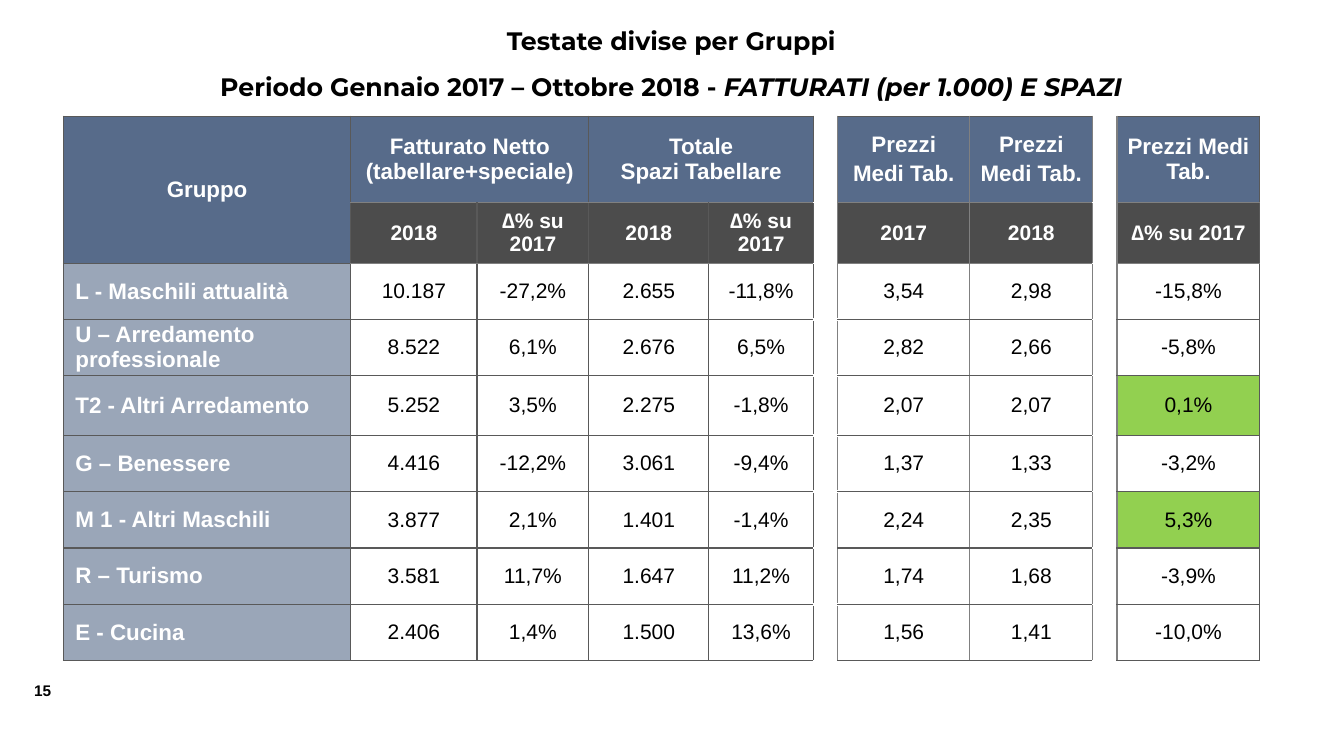
from pptx import Presentation
from pptx.dml.color import RGBColor
from pptx.enum.text import MSO_ANCHOR, MSO_AUTO_SIZE, PP_ALIGN
from pptx.oxml.ns import qn
from pptx.util import Cm, Pt
from lxml import etree

MIDDLE = MSO_ANCHOR.MIDDLE
NO_FIT = MSO_AUTO_SIZE.NONE
LEFT, CENTER = PP_ALIGN.LEFT, PP_ALIGN.CENTER

COLORS = {
    "blue": "576B8A", "black": "000000", "white": "FFFFFF",
    "green": "92D050", "dark": "595959", "gray": "808080",
}
COLUMNS = [7.24, 3.18, 2.82, 3.02, 2.64, 0.61, 3.33, 3.1, 0.61, 3.6]
ROWS = [2.18, 1.52, 1.42, 1.42, 1.5, 1.42, 1.42, 1.42, 1.42]
GAPS = (5, 8)
VALUES = [
    ["Gruppo", "Fatturato Netto (tabellare+speciale)", "", "Totale\nSpazi Tabellare", "", "",
     "Prezzi\nMedi Tab.", "Prezzi\nMedi Tab.", "", "Prezzi Medi Tab."],
    ["", "2018", "∆% su 2017", "2018", "∆% su 2017", "", "2017", "2018", "", "∆% su 2017"],
    ["L - Maschili attualità", "10.187", "-27,2%", "2.655", "-11,8%", "", "3,54", "2,98", "", "-15,8%"],
    ["U – Arredamento professionale", "8.522", "6,1%", "2.676", "6,5%", "", "2,82", "2,66", "", "-5,8%"],
    ["T2 - Altri Arredamento", "5.252", "3,5%", "2.275", "-1,8%", "", "2,07", "2,07", "", "0,1%"],
    ["G – Benessere", "4.416", "-12,2%", "3.061", "-9,4%", "", "1,37", "1,33", "", "-3,2%"],
    ["M 1 - Altri Maschili", "3.877", "2,1%", "1.401", "-1,4%", "", "2,24", "2,35", "", "5,3%"],
    ["R – Turismo", "3.581", "11,7%", "1.647", "11,2%", "", "1,74", "1,68", "", "-3,9%"],
    ["E - Cucina", "2.406", "1,4%", "1.500", "13,6%", "", "1,56", "1,41", "", "-10,0%"],
]


def add_span(para, text, size, color, font="Arial", bold=True, italic=False):
    span = para.add_run()
    span.text = text
    span.font.name = font
    span.font.size = Pt(size)
    span.font.bold = bold
    span.font.italic = italic
    span.font.color.rgb = RGBColor.from_string(COLORS[color])


def add_border(cell, side, color, width):
    line = etree.SubElement(cell._tc.get_or_add_tcPr(), qn(f"a:ln{side}"), w=str(Pt(width)))
    fill = etree.SubElement(line, qn("a:solidFill"))
    etree.SubElement(fill, qn("a:srgbClr"), val=COLORS[color])


deck = Presentation()
deck.slide_width, deck.slide_height = Cm(33.87), Cm(19.05)
page = deck.slides.add_slide(deck.slide_layouts[5])

# Title
title = page.shapes.title
title.left, title.top, title.width, title.height = Cm(2.82), Cm(0.05), Cm(28.19), Cm(2.72)
title.text_frame.auto_size = NO_FIT
title.text_frame.word_wrap = True
title.text_frame.vertical_anchor = MIDDLE
para = title.text_frame.paragraphs[0]
para.alignment = CENTER
para.line_spacing = 1.5
add_span(para, "Testate divise per Gruppi", 18, "black", "Montserrat")
para.add_line_break()
add_span(para, "Periodo Gennaio 2017 – Ottobre 2018 - ", 18, "black", "Montserrat")
add_span(para, "FATTURATI (per 1.000) E SPAZI", 18, "black", "Montserrat", italic=True)

# Table grid
frame = page.shapes.add_table(len(ROWS), len(COLUMNS), Cm(1.6), Cm(2.93),
                              Cm(sum(COLUMNS)), Cm(sum(ROWS)))
table = frame.table
table.first_row = table.horz_banding = False
for column, width in zip(table.columns, COLUMNS):
    column.width = Cm(width)
for row, height in zip(table.rows, ROWS):
    row.height = Cm(height)
for first, last in [((0, 0), (1, 0)), ((0, 1), (0, 2)), ((0, 3), (0, 4))]:
    table.cell(*first).merge(table.cell(*last))

# Table cells
for r, texts in enumerate(VALUES):
    for c, text in enumerate(texts):
        cell = table.cell(r, c)
        header, label, gap = r < 2, c == 0, c in GAPS

        # Borders come before the fill
        top = "white" if gap else "gray" if r in (1, 2) and not label else "dark"
        bottom = "white" if gap else "gray" if header and not label else "dark"
        add_border(cell, "L", "gray" if c > 5 else "dark", 1)
        add_border(cell, "R", "gray" if 5 <= c < 9 else "dark", 1)
        add_border(cell, "T", top, 2.25 if c == 5 and r > 2 else 1)
        add_border(cell, "B", bottom, 2.25 if c == 5 and 2 <= r < 8 else 1)

        # Fill and its opacity in percent
        fill, opacity = "white", 100
        if gap:
            pass
        elif r == 0 or (header and label):
            fill = "blue"
        elif header:
            fill, opacity = "black", 70
        elif label:
            fill, opacity = "blue", 60
        elif c == 9 and not text.startswith("-"):
            fill = "green"
        cell.fill.solid()
        cell.fill.fore_color.rgb = RGBColor.from_string(COLORS[fill])
        if opacity < 100:
            color = cell._tc.tcPr.find(qn("a:solidFill"))[0]
            etree.SubElement(color, qn("a:alpha"), val=str(opacity * 1000))

        # Text
        if not text:
            continue
        cell.vertical_anchor = MIDDLE
        if not header:
            cell.margin_left = Cm(0.3 if label else 0)
            cell.margin_right = cell.margin_top = cell.margin_bottom = 0
        for i, words in enumerate(text.split("\n")):
            para = cell.text_frame.paragraphs[0] if i == 0 else cell.text_frame.add_paragraph()
            para.alignment = LEFT if label and not header else CENTER
            if i and c > 5:
                para.space_before = Pt(3)
            bold = header or label
            add_span(para, words, 16 if r == 0 else 15 if r == 1 else 16 if label else 15,
                     "white" if bold else "black", bold=bold)

# Page number
box = page.shapes.add_textbox(Cm(0.61), Cm(17.04), Cm(1.07), Cm(0.74))
box.text_frame.word_wrap = False
add_span(box.text_frame.paragraphs[0], "15", 11, "black")

deck.save("out.pptx")
